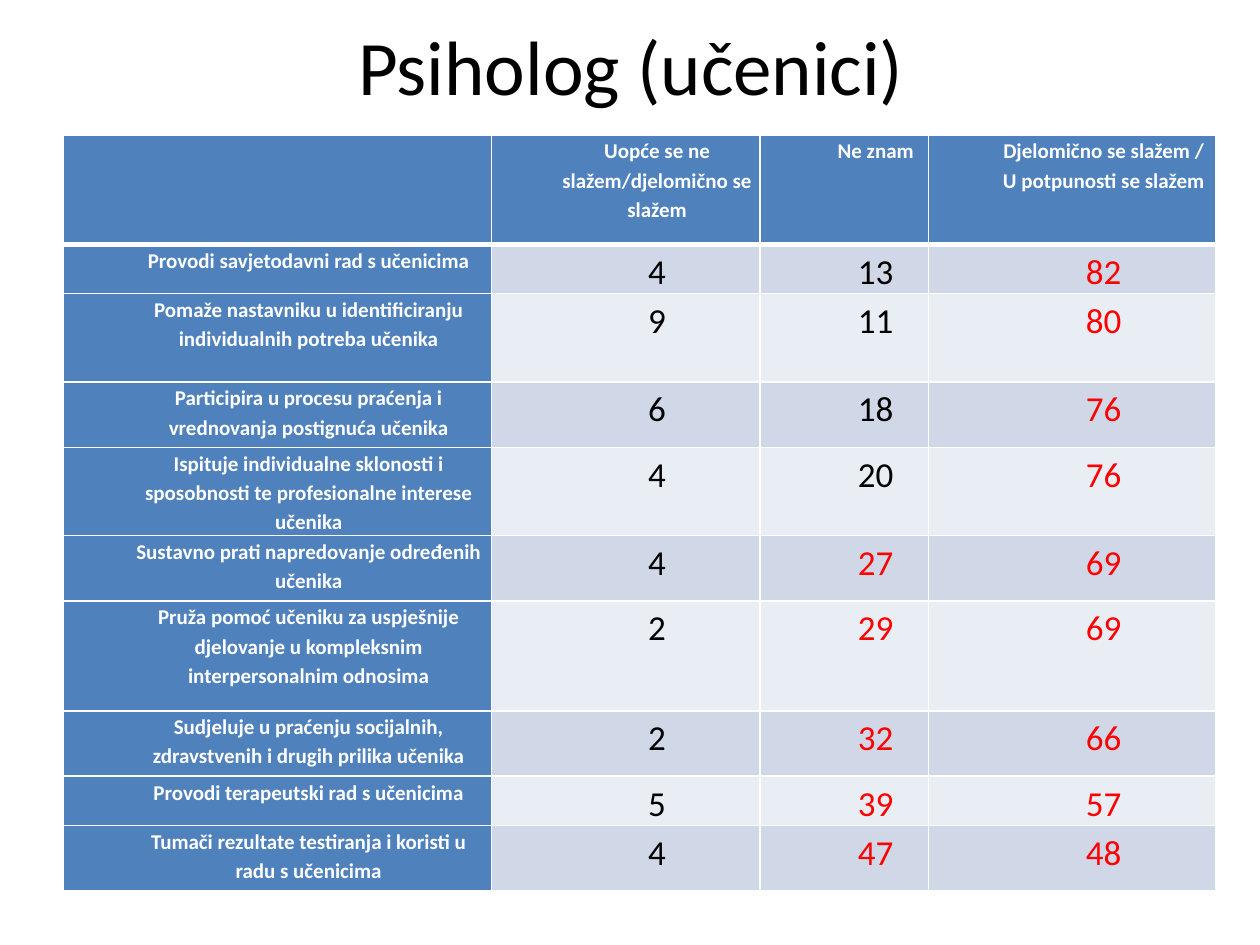
import pptx
import pptx.util
import pptx.dml.color
import pptx.enum.text
import pptx.oxml
import pptx.oxml.ns

Inches, Pt = pptx.util.Inches, pptx.util.Pt
RGBColor = pptx.dml.color.RGBColor
PP_ALIGN = pptx.enum.text.PP_ALIGN

FONT = "Calibri"
BLACK = RGBColor(0x00, 0x00, 0x00)
WHITE = RGBColor(0xFF, 0xFF, 0xFF)
RED = RGBColor(0xFF, 0x00, 0x00)
BLUE = RGBColor(0x4F, 0x81, 0xBD)
BANDS = (RGBColor(0xD0, 0xD8, 0xE8), RGBColor(0xE9, 0xED, 0xF4))
RED_FROM = 25  # percentages above this are highlighted

HEADERS = ("", "Uopće se ne slažem/djelomično se slažem", "Ne znam",
           "Djelomično se slažem / U potpunosti se slažem")
HEADER_HEIGHT = 0.87
COLUMN_WIDTHS = (3.4, 2.13, 1.34, 2.28)
# row height, statement, percentages
ANSWERS = (
    (0.35, "Provodi savjetodavni rad s učenicima", (4, 13, 82)),
    (0.7, "Pomaže nastavniku u identificiranju individualnih potreba učenika", (9, 11, 80)),
    (0.52, "Participira u procesu praćenja i vrednovanja postignuća učenika", (6, 18, 76)),
    (0.7, "Ispituje individualne sklonosti i sposobnosti te profesionalne interese učenika",
     (4, 20, 76)),
    (0.52, "Sustavno prati napredovanje određenih učenika", (4, 27, 69)),
    (0.87, "Pruža pomoć učeniku za uspješnije djelovanje u kompleksnim interpersonalnim odnosima",
     (2, 29, 69)),
    (0.52, "Sudjeluje u praćenju socijalnih, zdravstvenih i drugih prilika učenika", (2, 32, 66)),
    (0.35, "Provodi terapeutski rad s učenicima", (5, 39, 57)),
    (0.52, "Tumači rezultate testiranja i koristi u radu s učenicima", (4, 47, 48)),
)


def format_runs(p, size, color, bold=False):
    for r in p.runs:
        r.font.name = FONT
        r.font.size = Pt(size)
        r.font.bold = bold
        r.font.color.rgb = color


def add_title(s, text, left, top, width, height):
    sp = s.shapes.title
    sp.left, sp.top, sp.width, sp.height = left, top, width, height
    tf = sp.text_frame
    tf.text = text
    tf.vertical_anchor = pptx.enum.text.MSO_ANCHOR.MIDDLE
    p = tf.paragraphs[0]
    p.alignment = PP_ALIGN.CENTER
    format_runs(p, 44, BLACK)


def set_borders(cell, top, bottom):
    """Draw white borders; top and bottom widths are in points."""
    tcPr = cell._tc.get_or_add_tcPr()
    sides = (("L", 1), ("R", 1), ("T", top), ("B", bottom))
    for i, (side, width) in enumerate(sides):
        tcPr.insert(i, pptx.oxml.parse_xml(
            f'<a:ln{side} {pptx.oxml.ns.nsdecls("a")} w="{Pt(width)}">'
            f'<a:solidFill><a:srgbClr val="{WHITE}"/></a:solidFill></a:ln{side}>'))


def fill_cell(cell, text, fill, size, color, bold):
    cell.fill.solid()
    cell.fill.fore_color.rgb = fill
    cell.margin_left = cell.margin_right = Inches(0.06)
    cell.margin_top = cell.margin_bottom = 0
    cell.text_frame.text = text
    p = cell.text_frame.paragraphs[0]
    p.alignment = PP_ALIGN.CENTER
    p.line_spacing = 1.15
    pPr = p._p.get_or_add_pPr()
    pPr.set("marL", str(Inches(0.5)))
    pPr.set("indent", "0")
    format_runs(p, size, color, bold)


def add_answer_table(s, left, top, width, height):
    table = s.shapes.add_table(len(ANSWERS) + 1, len(HEADERS),
                               left, top, width, height).table
    table.first_col = True
    for column, w in zip(table.columns, COLUMN_WIDTHS):
        column.width = Inches(w)

    table.rows[0].height = Inches(HEADER_HEIGHT)
    for c, text in enumerate(HEADERS):
        fill_cell(table.cell(0, c), text, BLUE, 12, WHITE, True)
        set_borders(table.cell(0, c), 1, 3)

    for i, (row_height, statement, values) in enumerate(ANSWERS, 1):
        table.rows[i].height = Inches(row_height)
        fill_cell(table.cell(i, 0), statement, BLUE, 12, WHITE, True)
        for c, value in enumerate(values, 1):
            color = RED if value > RED_FROM else BLACK
            fill_cell(table.cell(i, c), str(value), BANDS[(i - 1) % 2], 20, color, False)
        for c in range(len(HEADERS)):
            set_borders(table.cell(i, c), 3 if i == 1 else 1, 1)


def main():
    prs = pptx.Presentation()
    prs.slide_width, prs.slide_height = Inches(10), Inches(7.5)
    s = prs.slides.add_slide(prs.slide_layouts[5])
    add_title(s, "Psiholog (učenici)", Inches(0.51), Inches(0.02), Inches(9), Inches(0.98))
    add_answer_table(s, Inches(0.5), Inches(1.07), Inches(9.15), Inches(6))
    prs.save("out.pptx")


if __name__ == "__main__":
    main()
